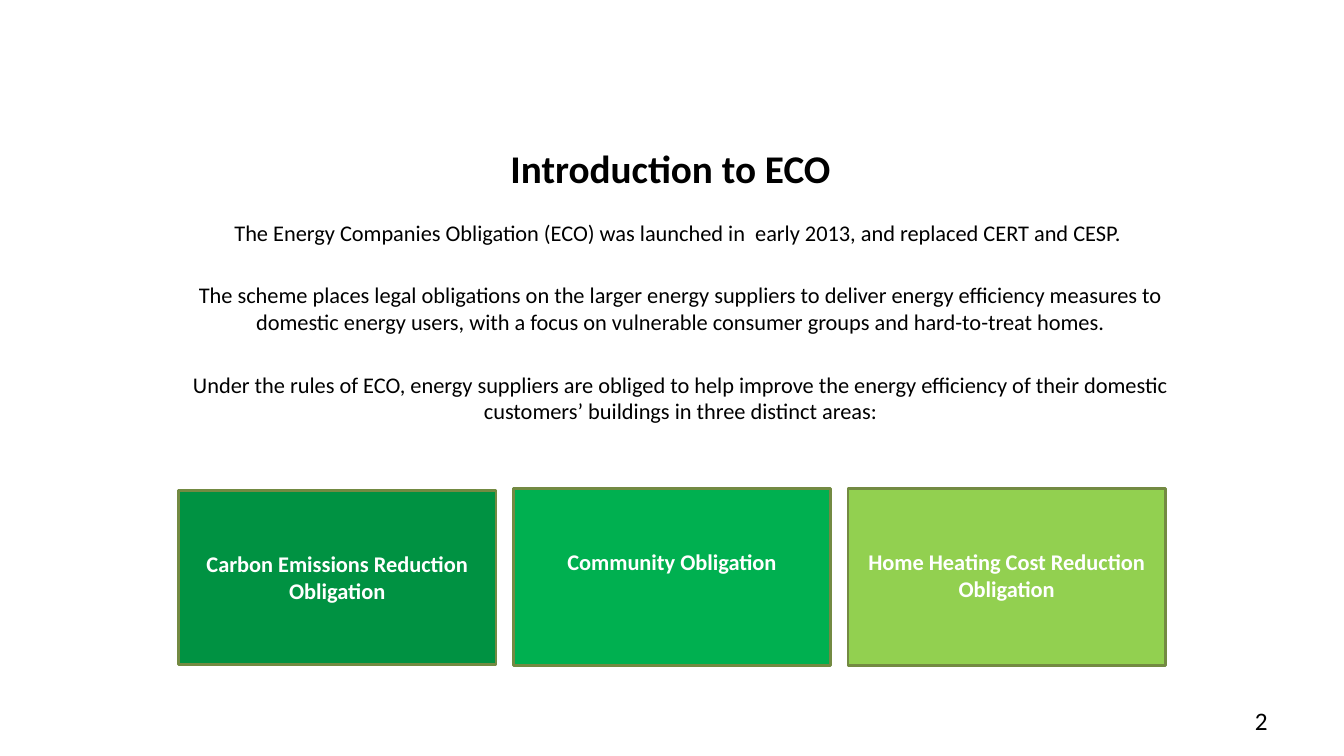
import pptx
import pptx.dml.color
import pptx.enum.shapes
import pptx.enum.text
import pptx.util

Inches = pptx.util.Inches
Pt = pptx.util.Pt
RGBColor = pptx.dml.color.RGBColor
Align = pptx.enum.text.PP_ALIGN
Anchor = pptx.enum.text.MSO_ANCHOR

BLACK = RGBColor(0x00, 0x00, 0x00)
WHITE = RGBColor(0xFF, 0xFF, 0xFF)
OLIVE = RGBColor(0x73, 0x8A, 0x42)
DARK_GREEN = RGBColor(0x00, 0x92, 0x42)
GREEN = RGBColor(0x00, 0xB0, 0x50)
LIGHT_GREEN = RGBColor(0x92, 0xD0, 0x50)

INTRODUCTION = [
    "The Energy Companies Obligation (ECO) was launched in  early 2013, and replaced CERT and CESP. ",
    "The scheme places legal obligations on the larger energy suppliers to deliver energy efficiency "
    "measures to domestic energy users, with a focus on vulnerable consumer groups and hard-to-treat homes.",
    "Under the rules of ECO, energy suppliers are obliged to help improve the energy efficiency of their "
    "domestic customers’ buildings in three distinct areas:",
]

OBLIGATIONS = [
    ("Carbon Emissions Reduction Obligation", DARK_GREEN, 4.87, 1.72),
    ("Community Obligation", GREEN, 4.85, 1.75),
    ("Home Heating Cost Reduction Obligation", LIGHT_GREEN, 4.85, 1.75),
]


class SlideBuilder:
    font_name = "Calibri"

    def __init__(self, slide):
        self.slide = slide

    def fill_frame(self, frame, paragraphs, size, color=BLACK, bold=False,
                   align=Align.CENTER, anchor=Anchor.TOP, gap=0):
        frame.word_wrap = True
        frame.vertical_anchor = anchor
        frame.text = "\n".join(paragraphs)
        for index, paragraph in enumerate(frame.paragraphs):
            paragraph.alignment = align
            if index:
                paragraph.space_before = Pt(gap)
            for run in paragraph.runs:
                run.font.name = self.font_name
                run.font.size = Pt(size)
                run.font.bold = bold
                run.font.color.rgb = color

    def text(self, left, top, width, height, paragraphs, size, **style):
        box = self.slide.shapes.add_textbox(
            Inches(left), Inches(top), Inches(width), Inches(height))
        self.fill_frame(box.text_frame, paragraphs, size, **style)

    def card(self, left, top, width, height, label, fill):
        card = self.slide.shapes.add_shape(
            pptx.enum.shapes.MSO_SHAPE.RECTANGLE,
            Inches(left), Inches(top), Inches(width), Inches(height))
        card.shadow.inherit = False
        card.fill.solid()
        card.fill.fore_color.rgb = fill
        card.line.color.rgb = OLIVE
        card.line.width = Pt(2)
        card.text_frame.margin_top = Inches(0.59)
        self.fill_frame(card.text_frame, [label], 16, color=WHITE, bold=True)


def main():
    presentation = pptx.Presentation()
    presentation.slide_width = Inches(13.33)
    presentation.slide_height = Inches(7.5)
    builder = SlideBuilder(
        presentation.slides.add_slide(presentation.slide_layouts[6]))

    builder.text(9.56, 6.95, 3.11, 0.4, ["2"], 18,
                 align=Align.RIGHT, anchor=Anchor.MIDDLE)
    builder.text(1.75, 2.12, 10, 1.53, INTRODUCTION, 16, gap=25.5)
    builder.text(2.15, 1.38, 9, 0.39, ["Introduction to ECO"], 28, bold=True)

    for column, (label, fill, top, height) in enumerate(OBLIGATIONS):
        builder.card(1.77 + column * 3.32, top, 3.15, height, label, fill)

    presentation.save("out.pptx")


if __name__ == "__main__":
    main()
